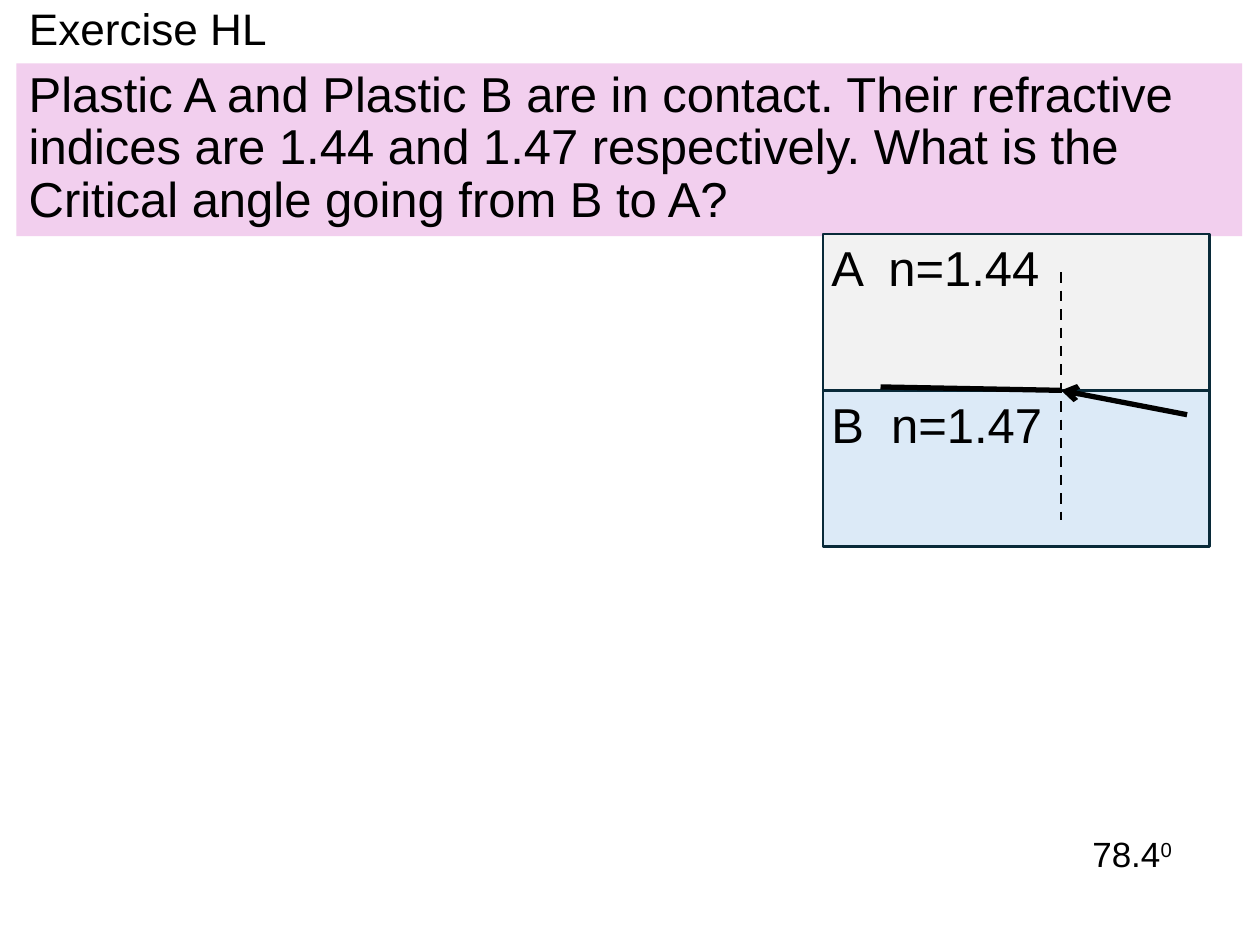
import pptx
import pptx.util
import pptx.dml.color
import pptx.enum.dml
import pptx.enum.shapes
import pptx.enum.text
import pptx.oxml.ns
import lxml.etree

Cm, Pt = pptx.util.Cm, pptx.util.Pt

THEME = {
    "font": "Arial", "ink": "000000", "panel": "F2CFEE", "border": "092A39",
    "title": 25.2, "body": 28, "answer": 20,
}

# Content; all lengths in centimetres
TITLE = "Exercise HL"
QUESTION = ("Plastic A and Plastic B are in contact. Their refractive indices are "
            "1.44 and 1.47 respectively. What is the Critical angle going from B to A?")
ANSWER = [("78.4", False), ("0", True)]
MEDIA = [("A  n=1.44", "F2F2F2"), ("B  n=1.47", "DCEAF7")]

LEFT, TOP, WIDTH, HEIGHT = 16.59, 4.72, 7.8, 3.15  # upper medium
HIT = (21.39, TOP + HEIGHT)                        # ray meets the boundary
# start, end, width in points, dashed, arrowhead
LINES = [
    ((17.75, 7.8), HIT, 3, False, False),
    ((23.93, 8.36), HIT, 3, False, True),
    ((HIT[0], 5.49), (HIT[0], 10.49), 1.5, True, False),
]


def rgb(value):
    return pptx.dml.color.RGBColor.from_string(value)


def write(s, runs, size, wrap=True, spacing=None,
          anchor=pptx.enum.text.MSO_ANCHOR.TOP):
    tf = s.text_frame
    tf.word_wrap = wrap
    tf.auto_size = pptx.enum.text.MSO_AUTO_SIZE.NONE
    tf.vertical_anchor = anchor
    p = tf.paragraphs[0]
    p.alignment = pptx.enum.text.PP_ALIGN.LEFT
    if spacing:
        p.line_spacing = spacing
    for text, raised in runs:
        r = p.add_run()
        r.text = text
        r.font.name = THEME["font"]
        r.font.size = Pt(size)
        r.font.color.rgb = rgb(THEME["ink"])
        if raised:
            r._r.get_or_add_rPr().set("baseline", "30000")


def add_text(shapes, box, runs, size, **options):
    s = shapes.add_textbox(*map(Cm, box))
    write(s, runs, size, **options)
    return s


def add_line(shapes, start, end, width, dashed, arrow):
    s = shapes.add_connector(pptx.enum.shapes.MSO_CONNECTOR.STRAIGHT,
                             *map(Cm, start + end))
    s.line.color.rgb = rgb(THEME["ink"])
    s.line.width = Pt(width)
    if dashed:
        s.line.dash_style = pptx.enum.dml.MSO_LINE.DASH
    qn = pptx.oxml.ns.qn
    if arrow:
        lxml.etree.SubElement(s.line._get_or_add_ln(), qn("a:tailEnd"), type="arrow")
    lxml.etree.SubElement(s._element.spPr, qn("a:effectLst"))


prs = pptx.Presentation()
prs.slide_width, prs.slide_height = Cm(25.4), Cm(19.05)
slide = prs.slides.add_slide(prs.slide_layouts[5])

# Title
title = slide.shapes.title
title.left, title.top, title.width, title.height = map(Cm, (0.33, 0, 18.36, 1.27))
write(title, [(TITLE, False)], THEME["title"], spacing=0.9,
      anchor=pptx.enum.text.MSO_ANCHOR.MIDDLE)

# Question panel
panel = add_text(slide.shapes, (0.33, 1.28, 24.71, 3.48), [(QUESTION, False)],
                 THEME["body"], spacing=0.9)
panel.fill.solid()
panel.fill.fore_color.rgb = rgb(THEME["panel"])

# Answer
add_text(slide.shapes, (21.77, 16.66, 2.16, 1.12), ANSWER, THEME["answer"], wrap=False)

# Diagram: media, then rays and normal, then labels
diagram = slide.shapes.add_group_shape().shapes
for i, (label, fill) in enumerate(MEDIA):
    s = diagram.add_shape(pptx.enum.shapes.MSO_SHAPE.RECTANGLE,
                          *map(Cm, (LEFT, TOP + i * HEIGHT, WIDTH, HEIGHT)))
    s.shadow.inherit = False
    s.fill.solid()
    s.fill.fore_color.rgb = rgb(fill)
    s.line.color.rgb = rgb(THEME["border"])
    s.line.width = Pt(1.5)
for line in LINES:
    add_line(diagram, *line)
for i, (label, fill) in enumerate(MEDIA):
    add_text(diagram, (LEFT - 0.08, TOP - 0.05 + i * HEIGHT, 4.8, 1.45),
             [(label, False)], THEME["body"], wrap=False)

prs.save("out.pptx")
